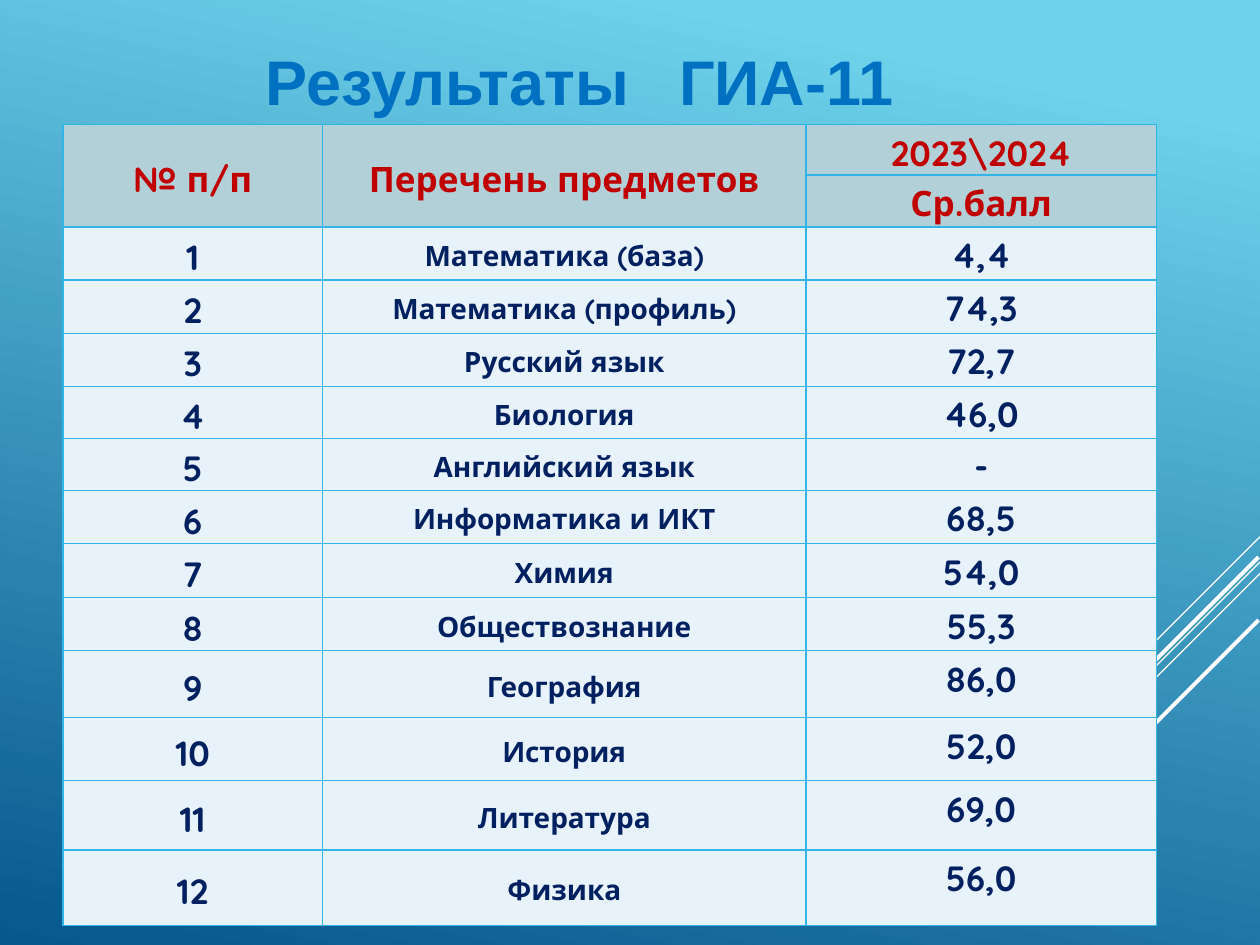
import pptx
import pptx.dml.color
import pptx.enum.shapes
import pptx.enum.text
import pptx.oxml
import pptx.oxml.ns
import pptx.util
import lxml.etree

Cm = pptx.util.Cm
Pt = pptx.util.Pt
RGBColor = pptx.dml.color.RGBColor
Align = pptx.enum.text.PP_ALIGN
Anchor = pptx.enum.text.MSO_ANCHOR
qn = pptx.oxml.ns.qn

SKY = RGBColor(0x6E, 0xD2, 0xEB)
DEEP_BLUE = RGBColor(0x06, 0x58, 0x8E)
WHITE = RGBColor(0xFF, 0xFF, 0xFF)
TITLE_BLUE = RGBColor(0x00, 0x70, 0xC0)
HEADER_RED = RGBColor(0xC0, 0x00, 0x00)
NAVY = RGBColor(0x00, 0x20, 0x60)
HEADER_FILL = RGBColor(0xB2, 0xD0, 0xD8)
BODY_FILL = RGBColor(0xE8, 0xF2, 0xFA)
BORDER = RGBColor(0x31, 0xB4, 0xE6)

RESULTS = [
    ("Математика (база)", "4,4"),
    ("Математика (профиль)", "74,3"),
    ("Русский язык", "72,7"),
    ("Биология", "46,0"),
    ("Английский язык", "-"),
    ("Информатика и ИКТ", "68,5"),
    ("Химия", "54,0"),
    ("Обществознание", "55,3"),
    ("География", "86,0"),
    ("История", "52,0"),
    ("Литература", "69,0"),
    ("Физика", "56,0"),
]
COLUMN_WIDTHS = [5.23, 9.75, 7.06]
ROW_HEIGHTS = [1.02, 0.84, 1.07, 1.07, 1.07, 0.91, 0.64, 1.07, 1.09, 1.07,
               1.35, 1.27, 1.4, 1.52]
STRIPES = [
    (6.86, 0, 2.11, 0.75),
    (6.86, 0.51, 6.87, 0.75),
    (6.86, 0.74, 4.37, 0.75),
    (6.83, 0.41, 3.99, 2.25),
    (6.83, 1.68, 2.9, 2.25),
]


def write_text(frame, text, *, size, color, font="Quicksand", align=None, spacing=None):
    para = frame.paragraphs[0]
    para.alignment = align
    para.line_spacing = spacing
    span = para.add_run()
    span.text = text
    span.font.name = font
    span.font.size = Pt(size)
    span.font.bold = True
    span.font.color.rgb = color
    return para


def paint_background(page):
    fill = page.background.fill
    fill.gradient()
    fill.gradient_angle = 360 - 102
    for stop, color, position in zip(fill.gradient_stops, (SKY, DEEP_BLUE), (0.1, 1)):
        stop.color.rgb = color
        stop.position = position


def draw_stripes(page, left, top):
    group = page.shapes.add_group_shape()
    for x, y, run, weight in STRIPES:
        stripe = group.shapes.add_connector(
            pptx.enum.shapes.MSO_CONNECTOR.STRAIGHT,
            Cm(left + x), Cm(top + y), Cm(left + x - run), Cm(top + y + run))
        stripe.line.color.rgb = WHITE
        stripe.line.width = Pt(weight)
        lxml.etree.SubElement(stripe.element.spPr, qn("a:effectLst"))


def draw_title(page, left, top, width, height):
    box = page.shapes.add_textbox(Cm(left), Cm(top), Cm(width), Cm(height))
    frame = box.text_frame
    frame.word_wrap = True
    frame.auto_size = pptx.enum.text.MSO_AUTO_SIZE.SHAPE_TO_FIT_TEXT
    para = write_text(frame, "Результаты\tГИА-11", size=36, color=TITLE_BLUE, font="Arial")
    properties = para._p.get_or_add_pPr()
    tabs = lxml.etree.SubElement(properties, qn("a:tabLst"))
    lxml.etree.SubElement(tabs, qn("a:tab"), pos=str(Cm(8.33)), algn="l")


def format_cell(cell, fill, inset=0.0, anchor=Anchor.TOP):
    cell.margin_left = cell.margin_top = cell.margin_right = Cm(inset)
    cell.margin_bottom = 0
    cell.vertical_anchor = anchor
    cell.fill.solid()
    cell.fill.fore_color.rgb = fill
    properties = cell._tc.get_or_add_tcPr()
    for index, side in enumerate(("a:lnL", "a:lnR", "a:lnT", "a:lnB")):
        line = pptx.oxml.parse_xml(
            f'<{side} {pptx.oxml.ns.nsdecls("a")} w="{Pt(1)}"><a:solidFill>'
            f'<a:srgbClr val="{BORDER}"/></a:solidFill></{side}>')
        properties.insert(index, line)


def draw_results(page, left, top):
    content = [("№ п/п", "Перечень предметов", "2023\\2024"), ("", "", "Ср.балл")]
    content += [(str(number), *result) for number, result in enumerate(RESULTS, 1)]
    table = page.shapes.add_table(
        len(ROW_HEIGHTS), len(COLUMN_WIDTHS), Cm(left), Cm(top),
        Cm(sum(COLUMN_WIDTHS)), Cm(sum(ROW_HEIGHTS))).table
    for column, width in zip(table.columns, COLUMN_WIDTHS):
        column.width = Cm(width)
    for row, height in zip(table.rows, ROW_HEIGHTS):
        row.height = Cm(height)
    for column in (0, 1):
        table.cell(0, column).merge(table.cell(1, column))
    for row, texts in enumerate(content):
        header = row < 2
        for column, text in enumerate(texts):
            cell = table.cell(row, column)
            format_cell(cell, HEADER_FILL if header else BODY_FILL,
                        inset=0.03 if column == 0 else 0,
                        anchor=Anchor.TOP if column == 2 else Anchor.MIDDLE)
            if text:
                write_text(cell.text_frame, text,
                           size=16 if column == 1 and not header else 20,
                           color=HEADER_RED if header else NAVY,
                           align=Align.CENTER, spacing=1.15)


def main():
    deck = pptx.Presentation()
    deck.slide_width = Cm(25.4)
    deck.slide_height = Cm(19.05)
    page = deck.slides.add_slide(deck.slide_layouts[6])
    paint_background(page)
    draw_stripes(page, 18.54, 10.82)
    draw_results(page, 1.27, 2.51)
    draw_title(page, 5.11, 0.74, 13.94, 1.8)
    deck.save("out.pptx")


if __name__ == "__main__":
    main()
